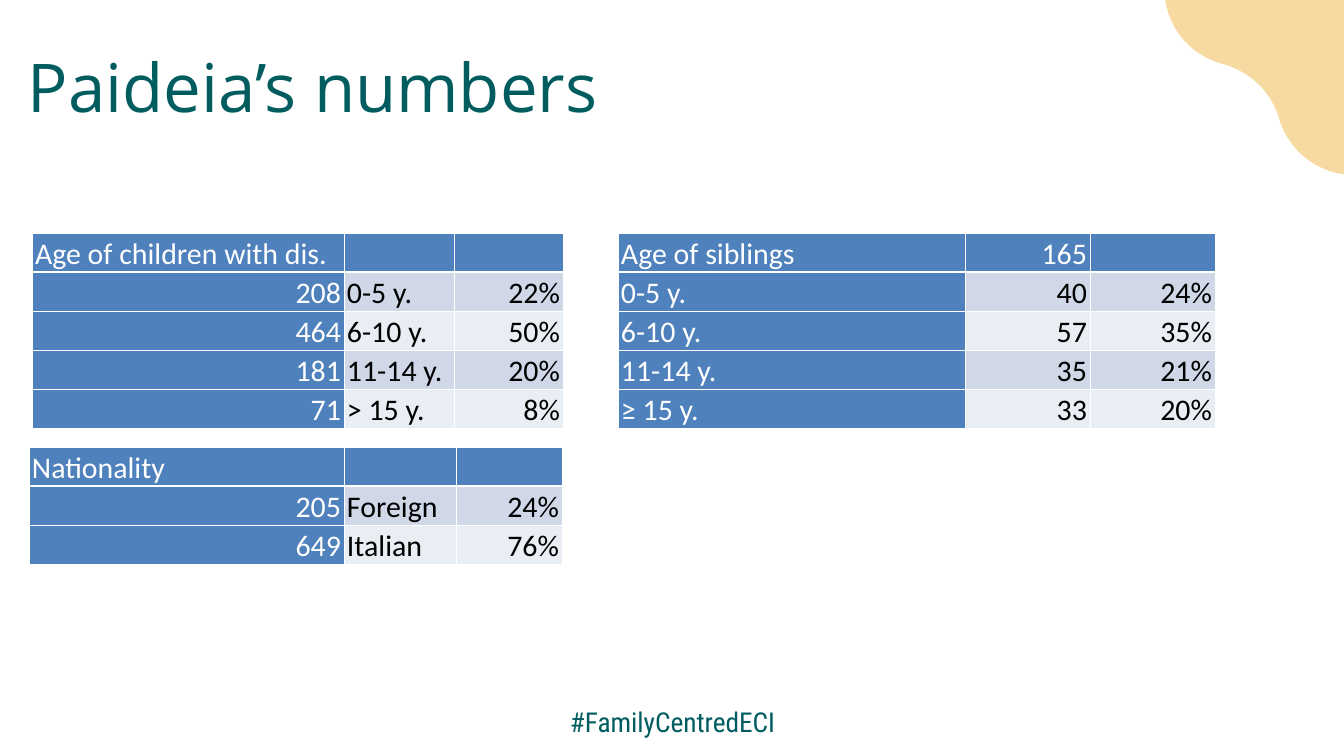
"""Build the slide of family age and nationality tables."""
from lxml import etree
from pptx import Presentation
from pptx.dml.color import RGBColor
from pptx.enum.text import MSO_ANCHOR, MSO_AUTO_SIZE, PP_ALIGN
from pptx.oxml.ns import qn
from pptx.util import Emu, Pt

TOP, BOTTOM = MSO_ANCHOR.TOP, MSO_ANCHOR.BOTTOM
LEFT, CENTER, RIGHT = PP_ALIGN.LEFT, PP_ALIGN.CENTER, PP_ALIGN.RIGHT
NO_AUTOFIT = MSO_AUTO_SIZE.NONE

EMU_PER_PX = 914400 / 67.2
SLIDE_SIZE = (1344, 756)
ROW_HEIGHT = 38
CELL_MARGIN = 3
TEAL, WHITE, BLACK, BLUE, SAND = "015C60", "FFFFFF", "000000", "4F81BD", "F0B238"
BANDS = ("D0D8E8", "E9EDF4")

TITLE = ("Paideia’s numbers", (28, 34, 918, 87), "Open Sans", 72, 98.2, LEFT)
HASHTAG = ("#FamilyCentredECI", (548, 700, 249, 37), "Roboto Condensed", 29.3, 41, CENTER)

TABLES = [
    ((32, 233), (312, 110, 109), [
        ("Age of children with dis.", "", ""),
        ("208", "0-5 y.", "22%"),
        ("464", "6-10 y.", "50%"),
        ("181", "11-14 y.", "20%"),
        ("71", "> 15 y.", "8%"),
    ]),
    ((29, 447), (315, 112, 106), [
        ("Nationality", "", ""),
        ("205", "Foreign", "24%"),
        ("649", "Italian", "76%"),
    ]),
    ((618, 233), (347, 125, 125), [
        ("Age of siblings", "165", ""),
        ("0-5 y.", "40", "24%"),
        ("6-10 y.", "57", "35%"),
        ("11-14 y.", "35", "21%"),
        ("≥ 15 y.", "33", "20%"),
    ]),
]

BLOB_START = (1704, -488)
BLOB_CURVES = [
    ((1683, -508), (1654, -515), (1628, -507)),
    ((1601, -500), (1572, -506), (1552, -526)),
    ((1521, -556), (1471, -556), (1441, -524)),
    ((1422, -505), (1394, -496), (1366, -503)),
    ((1353, -507), (1339, -506), (1325, -503)),
    ((1297, -495), (1277, -472), (1271, -446)),
    ((1264, -420), (1244, -398), (1216, -390)),
    ((1175, -378), (1150, -335), (1163, -293)),
    ((1169, -267), (1163, -239), (1144, -218)),
    ((1134, -208), (1127, -196), (1124, -182)),
    ((1116, -154), (1126, -126), (1145, -107)),
    ((1165, -88), (1173, -59), (1167, -32)),
    ((1156, 11), (1181, 53), (1223, 64)),
    ((1249, 71), (1271, 91), (1279, 118)),
    ((1291, 160), (1335, 184), (1376, 172)),
    ((1404, 164), (1433, 173), (1452, 192)),
    ((1472, 210), (1500, 218), (1528, 210)),
    ((1542, 206), (1554, 199), (1563, 189)),
    ((1583, 169), (1612, 161), (1638, 168)),
    ((1680, 179), (1722, 153), (1733, 111)),
    ((1740, 83), (1761, 62), (1788, 55)),
    ((1814, 48), (1835, 27), (1842, -1)),
    ((1845, -15), (1845, -29), (1841, -42)),
    ((1835, -67), (1840, -95), (1859, -116)),
    ((1869, -126), (1877, -138), (1880, -153)),
    ((1888, -181), (1878, -210), (1859, -228)),
    ((1839, -247), (1831, -276), (1837, -304)),
    ((1848, -345), (1822, -388), (1781, -398)),
    ((1755, -405), (1732, -425), (1724, -452)),
    ((1721, -466), (1714, -478), BLOB_START),
]


def px(length):
    return Emu(round(length * EMU_PER_PX))


def color(hex_string):
    return RGBColor.from_string(hex_string)


def format_font(paragraph, name, size, hex_string):
    for run in paragraph.runs:
        run.font.name = name
        run.font.size = Pt(size)
        run.font.bold = False
        run.font.color.rgb = color(hex_string)


def fill_text(shape, text, box, font_name, size, line_spacing, alignment):
    shape.left, shape.top, shape.width, shape.height = map(px, box)
    frame = shape.text_frame
    frame.word_wrap = True
    frame.auto_size = NO_AUTOFIT
    frame.vertical_anchor = TOP
    frame.margin_left = frame.margin_top = frame.margin_right = frame.margin_bottom = 0
    frame.text = text
    paragraph = frame.paragraphs[0]
    paragraph.alignment = alignment
    paragraph.line_spacing = Pt(line_spacing)
    paragraph.space_before = Pt(0)
    format_font(paragraph, font_name, size, TEAL)


def add_blob(slide):
    builder = slide.shapes.build_freeform(*BLOB_START, scale=EMU_PER_PX)
    builder.add_line_segments([point for curve in BLOB_CURVES for point in curve])
    blob = builder.convert_to_shape()
    blob.shadow.inherit = False
    outline = blob._element.find(".//" + qn("a:path"))
    segments = outline.findall(qn("a:lnTo"))
    for start in range(0, len(segments), 3):
        curve = etree.Element(qn("a:cubicBezTo"))
        segments[start].addprevious(curve)
        for segment in segments[start:start + 3]:
            curve.append(segment[0])
            outline.remove(segment)
    blob.fill.solid()
    blob.fill.fore_color.rgb = color(SAND)
    fill_color = blob._element.spPr.find(".//" + qn("a:srgbClr"))
    etree.SubElement(fill_color, qn("a:alpha"), val="47000")
    blob.line.fill.background()


def add_borders(cell, bottom_width):
    properties = cell._tc.get_or_add_tcPr()
    for side, width in (("L", 1), ("R", 1), ("T", 1), ("B", bottom_width)):
        line = etree.SubElement(properties, qn("a:ln" + side), w=str(Pt(width)))
        solid = etree.SubElement(line, qn("a:solidFill"))
        etree.SubElement(solid, qn("a:srgbClr"), val=WHITE)


def format_cell(cell, text, row, column):
    is_heading = row == 0 or column == 0
    add_borders(cell, 3 if row == 0 else 1)
    cell.fill.solid()
    cell.fill.fore_color.rgb = color(BLUE if is_heading else BANDS[(row - 1) % 2])
    cell.margin_left = cell.margin_right = px(CELL_MARGIN)
    cell.margin_top = cell.margin_bottom = 0
    cell.vertical_anchor = BOTTOM
    cell.text_frame.text = text
    paragraph = cell.text_frame.paragraphs[0]
    paragraph.alignment = RIGHT if text.rstrip("%").isdigit() else LEFT
    paragraph.line_spacing = 1.07
    paragraph.space_after = Pt(8)
    format_font(paragraph, "Calibri", 32, WHITE if is_heading else BLACK)


def add_data_table(slide, position, widths, rows):
    size = (sum(widths), ROW_HEIGHT * len(rows))
    table = slide.shapes.add_table(len(rows), len(widths), *map(px, position + size)).table
    table.first_row = table.horz_banding = False
    for column, width in enumerate(widths):
        table.columns[column].width = px(width)
    for row, texts in enumerate(rows):
        table.rows[row].height = px(ROW_HEIGHT)
        for column, text in enumerate(texts):
            format_cell(table.cell(row, column), text, row, column)


def main():
    presentation = Presentation()
    presentation.slide_width, presentation.slide_height = map(px, SLIDE_SIZE)
    slide = presentation.slides.add_slide(presentation.slide_layouts[5])
    fill_text(slide.shapes.add_textbox(0, 0, 0, 0), *HASHTAG)
    fill_text(slide.shapes.title, *TITLE)
    add_blob(slide)
    for position, widths, rows in TABLES:
        add_data_table(slide, position, widths, rows)
    presentation.save("out.pptx")


if __name__ == "__main__":
    main()
